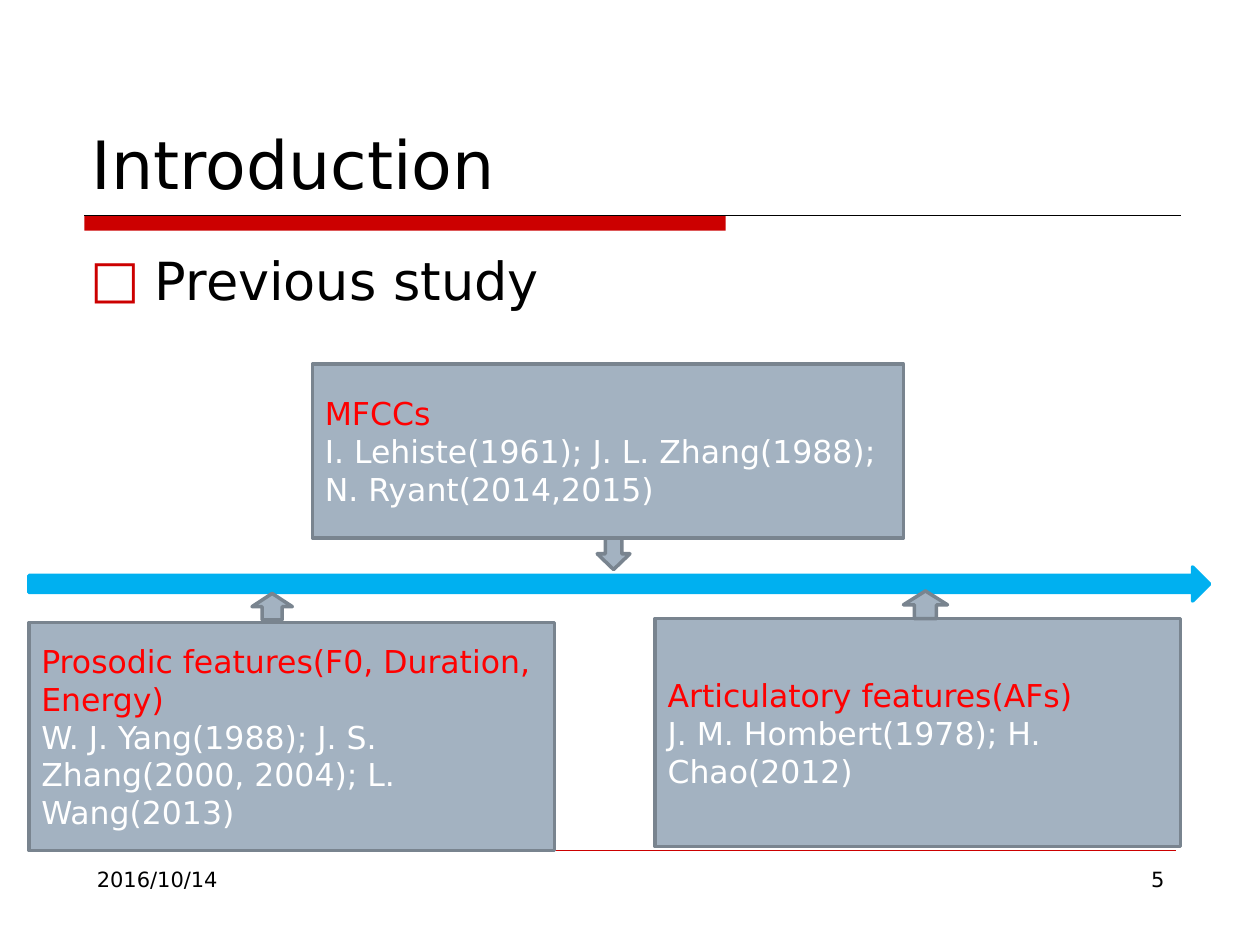
from lxml import etree
from pptx import Presentation
from pptx.dml.color import RGBColor
from pptx.enum.shapes import MSO_CONNECTOR, MSO_SHAPE
from pptx.enum.text import MSO_ANCHOR, MSO_AUTO_SIZE, PP_ALIGN
from pptx.oxml.ns import qn
from pptx.util import Inches, Pt

RECTANGLE = MSO_SHAPE.RECTANGLE
RIGHT_ARROW = MSO_SHAPE.RIGHT_ARROW
UP_ARROW = MSO_SHAPE.UP_ARROW
DOWN_ARROW = MSO_SHAPE.DOWN_ARROW
STRAIGHT = MSO_CONNECTOR.STRAIGHT
TOP, MIDDLE, BOTTOM = MSO_ANCHOR.TOP, MSO_ANCHOR.MIDDLE, MSO_ANCHOR.BOTTOM
LEFT, RIGHT = PP_ALIGN.LEFT, PP_ALIGN.RIGHT
NO_AUTOFIT = MSO_AUTO_SIZE.NONE

FONT = "DejaVu Sans"
BLACK, WHITE = "000000", "FFFFFF"
ACCENT, HIGHLIGHT = "CC0000", "FF0000"
TIMELINE_BLUE = "00B0F0"
BOX_FILL, BOX_LINE = "A3B2C1", "79848F"


def color(hex_value):
    return RGBColor.from_string(hex_value)


def set_attributes(target, values):
    for name, value in values.items():
        setattr(target, name, value)


class SlideBuilder:
    """Holds the style and the current slide."""

    def __init__(self, slide):
        self.slide = slide

    def fill_text(self, shape, lines, anchor=TOP, align=LEFT):
        """Fill a shape with (text, size, colour) lines, one per paragraph."""
        frame = shape.text_frame
        set_attributes(frame, {"word_wrap": True, "auto_size": NO_AUTOFIT,
                               "vertical_anchor": anchor})
        for index, (text, size, hex_value) in enumerate(lines):
            paragraph = frame.add_paragraph() if index else frame.paragraphs[0]
            paragraph.alignment = align
            run = paragraph.add_run()
            run.text = text
            set_attributes(run.font, {"name": FONT, "size": Pt(size)})
            run.font.color.rgb = color(hex_value)

    def placeholder(self, index, left, top, width, height, lines, anchor=TOP):
        shape = self.slide.placeholders[index]
        set_attributes(shape, {"left": Inches(left), "top": Inches(top),
                               "width": Inches(width), "height": Inches(height)})
        self.fill_text(shape, lines, anchor)
        return shape

    def bullet(self, paragraph, character, hex_value, indent):
        properties = paragraph._p.get_or_add_pPr()
        properties.set("marL", str(Inches(indent)))
        properties.set("indent", str(-Inches(indent)))
        bullet_color = etree.SubElement(properties, qn("a:buClr"))
        etree.SubElement(bullet_color, qn("a:srgbClr"), val=hex_value)
        etree.SubElement(properties, qn("a:buFont"), typeface=FONT)
        etree.SubElement(properties, qn("a:buChar"), char=character)

    def text(self, left, top, width, height, lines, align=LEFT):
        box = self.slide.shapes.add_textbox(
            Inches(left), Inches(top), Inches(width), Inches(height))
        self.fill_text(box, lines, align=align)

    def line(self, left, right, y, hex_value, weight):
        connector = self.slide.shapes.add_connector(
            STRAIGHT, Inches(left), Inches(y), Inches(right), Inches(y))
        connector.line.color.rgb = color(hex_value)
        connector.line.width = Pt(weight)
        etree.SubElement(connector._element.spPr, qn("a:effectLst"))

    def shape(self, kind, left, top, width, height, fill=BOX_FILL, outline=BOX_LINE):
        shape = self.slide.shapes.add_shape(
            kind, Inches(left), Inches(top), Inches(width), Inches(height))
        shape.shadow.inherit = False
        shape.fill.solid()
        shape.fill.fore_color.rgb = color(fill)
        if outline:
            shape.line.color.rgb = color(outline)
            shape.line.width = Pt(2)
        else:
            shape.line.fill.background()
        return shape

    def study_box(self, left, top, width, height, heading, studies):
        box = self.shape(RECTANGLE, left, top, width, height)
        self.fill_text(box, [(heading, 18, HIGHLIGHT), (studies, 18, WHITE)], MIDDLE)


def main():
    presentation = Presentation()
    set_attributes(presentation, {"slide_width": Inches(10),
                                  "slide_height": Inches(7.5)})
    slide = presentation.slides.add_slide(presentation.slide_layouts[1])
    builder = SlideBuilder(slide)

    builder.placeholder(0, 0.63, 0.33, 8.75, 1.33,
                        [("Introduction", 38, BLACK)], BOTTOM)
    body = builder.placeholder(1, 0.62, 1.92, 8.75, 4.67,
                               [("Previous study", 30, BLACK)])
    builder.bullet(body.text_frame.paragraphs[0], "□", ACCENT, 0.51)

    builder.shape(RECTANGLE, 0.67, 1.71, 5.09, 0.12, ACCENT, None)
    builder.line(0.67, 9.37, 1.71, BLACK, 0.75)
    builder.line(0.67, 9.33, 6.75, ACCENT, 0.25)
    for left, text, align in ((0.67, "2016/10/14", LEFT), (7.17, "5", RIGHT)):
        builder.text(left, 6.83, 2.17, 0.52, [(text, 12, BLACK)], align)

    builder.shape(RIGHT_ARROW, 0.23, 4.5, 9.37, 0.27, TIMELINE_BLUE, TIMELINE_BLUE)
    builder.study_box(0.23, 4.94, 4.17, 1.81,
                      "Prosodic features(F0, Duration, Energy)",
                      "W. J. Yang(1988); J. S. Zhang(2000, 2004); L. Wang(2013)")
    builder.study_box(5.2, 4.91, 4.17, 1.81, "Articulatory features(AFs)",
                      "J. M. Hombert(1978); H. Chao(2012)")
    builder.study_box(2.48, 2.89, 4.69, 1.38, "MFCCs",
                      "I. Lehiste(1961); J. L. Zhang(1988); N. Ryant(2014,2015)")
    for kind, left, top, width, height in ((UP_ARROW, 2, 4.71, 0.32, 0.21),
                                           (UP_ARROW, 7.17, 4.69, 0.35, 0.22),
                                           (DOWN_ARROW, 4.74, 4.27, 0.26, 0.25)):
        builder.shape(kind, left, top, width, height)

    presentation.save("out.pptx")


if __name__ == "__main__":
    main()
